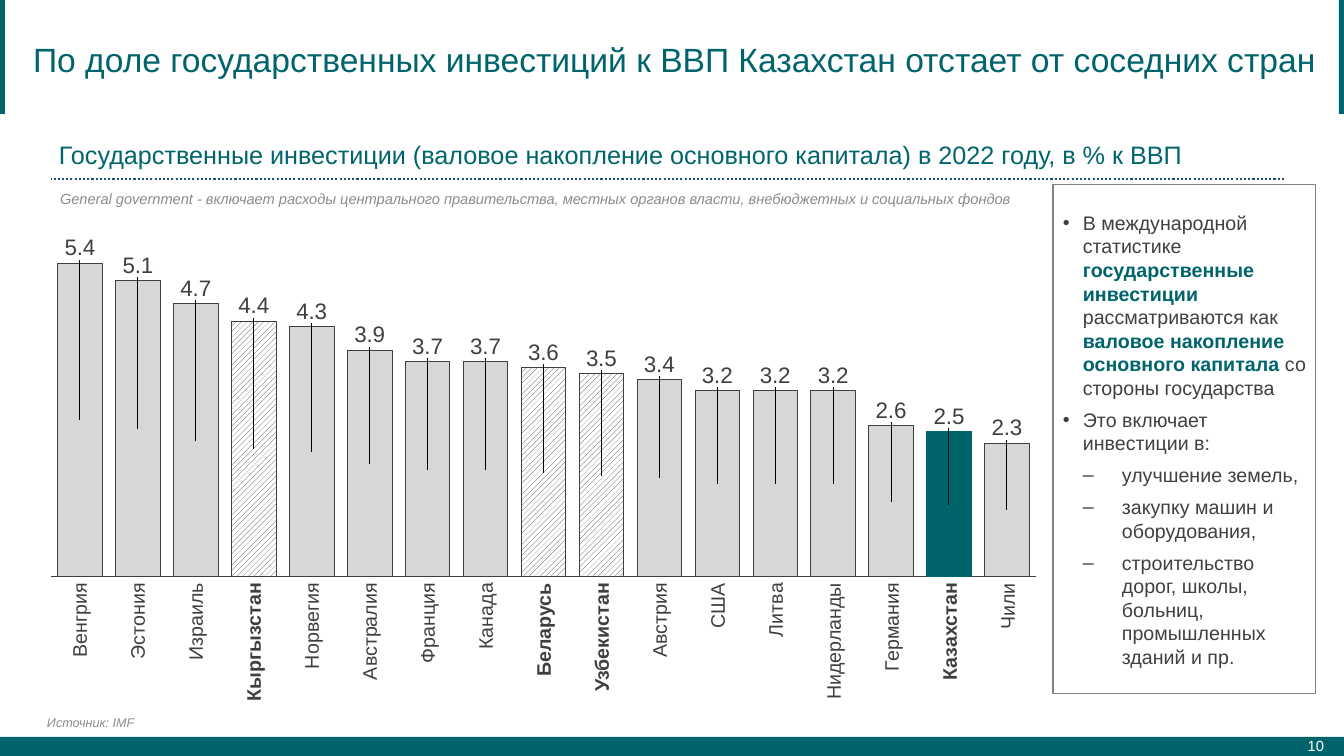
import pptx
import pptx.chart.data
import pptx.dml.color
import pptx.enum.chart
import pptx.enum.dml
import pptx.enum.shapes
import pptx.enum.text
import pptx.oxml
import pptx.oxml.ns
import pptx.util

# Content
TEAL, DARK, GREY, BAR, WHITE = "00646C", "3F3F3F", "8C8C8C", "D6D7D9", "FFFFFF"
TITLE = "По доле государственных инвестиций к ВВП Казахстан отстает от соседних стран"
HEADING = "Государственные инвестиции (валовое накопление основного капитала) в 2022 году, в % к ВВП"
DEFINITION = ("General government - включает расходы центрального правительства, "
              "местных органов власти, внебюджетных и социальных фондов")
SOURCE = "Источник: IMF"
PAGE = "10"
# country, % of GDP, label length in px
COUNTRIES = [
    ("Венгрия", 5.4, 75), ("Эстония", 5.1, 77), ("Израиль", 4.7, 78),
    ("Кыргызстан", 4.4, 118), ("Норвегия", 4.3, 86), ("Австралия", 3.9, 97),
    ("Франция", 3.7, 81), ("Канада", 3.7, 67), ("Беларусь", 3.6, 94),
    ("Узбекистан", 3.5, 109), ("Австрия", 3.4, 75), ("США", 3.2, 45),
    ("Литва", 3.2, 54), ("Нидерланды", 3.2, 116), ("Германия", 2.6, 88),
    ("Казахстан", 2.5, 97), ("Чили", 2.3, 46),
]
NEIGHBOURS = ("Кыргызстан", "Беларусь", "Узбекистан")
FOCUS = "Казахстан"
# bullet, text indent px, hanging px, runs (text, highlighted)
NOTES = [
    ("•", 20, 20, [("В международной статистике ", False),
                   ("государственные инвестиции ", True),
                   ("рассматриваются как ", False),
                   ("валовое накопление основного капитала ", True),
                   ("со стороны государства", False)]),
    ("•", 20, 20, [("Это включает инвестиции в:", False)]),
    ("–", 59, 39, [("улучшение земель,", False)]),
    ("–", 59, 39, [("закупку машин и оборудования,", False)]),
    ("–", 59, 39, [("строительство дорог, школы, больниц, промышленных зданий и пр.", False)]),
]
PLOT = {"x": 0.009, "y": 0.133, "w": 0.982, "h": 0.773}
LABEL_GAP = 0.037
LABEL_LEFT, LABEL_TOP, LABEL_STEP, LABEL_WIDTH = 70, 583, 58, 21

ALIGN = pptx.enum.text.PP_ALIGN
ANCHOR = pptx.enum.text.MSO_ANCHOR
RECTANGLE = pptx.enum.shapes.MSO_SHAPE.RECTANGLE


def px(length):
    return pptx.util.Emu(round(length * 914400 / 100.8))


def color(value):
    return pptx.dml.color.RGBColor.from_string(value)


def set_font(font, fill, **values):
    for name, value in {"name": "Arial", **values}.items():
        setattr(font, name, value)
    font.color.rgb = color(fill)


def set_frame(frame, margins=None, **values):
    for name, value in {"word_wrap": True, **values}.items():
        setattr(frame, name, value)
    if margins:
        horizontal, vertical = margins
        frame.margin_left = frame.margin_right = px(horizontal)
        frame.margin_top = frame.margin_bottom = px(vertical)


def add_text(slide, box, text, size, fill, align=ALIGN.LEFT, margins=(0, 0),
             wrap=True, anchor=ANCHOR.MIDDLE, **font):
    shape = slide.shapes.add_textbox(*map(px, box))
    set_frame(shape.text_frame, margins, word_wrap=wrap, vertical_anchor=anchor)
    paragraph = shape.text_frame.paragraphs[0]
    paragraph.alignment = align
    run = paragraph.add_run()
    run.text = text
    set_font(run.font, fill, size=pptx.util.Pt(size), **font)
    return shape


def add_rectangle(slide, box, fill=None, line=None):
    shape = slide.shapes.add_shape(RECTANGLE, *map(px, box))
    shape.shadow.inherit = False
    if fill:
        shape.fill.solid()
        shape.fill.fore_color.rgb = color(fill)
    else:
        shape.fill.background()
    if line:
        shape.line.color.rgb = color(line)
        shape.line.width = pptx.util.Pt(0.75)
    else:
        shape.line.fill.background()
    return shape


def add_child(parent, tag, position=None, **attributes):
    child = pptx.oxml.parse_xml(f"<{tag} {pptx.oxml.ns.nsdecls(tag.split(':')[0])}/>")
    for name, value in attributes.items():
        child.set(name, str(value))
    parent.insert(len(parent) if position is None else position, child)
    return child


def add_layout(parent, position, **values):
    manual = add_child(add_child(parent, "c:layout", position), "c:manualLayout")
    for name, value in values.items():
        add_child(manual, f"c:{name}", val=value)


def style_bar(part, fill, line, pattern=False):
    if pattern:
        part.format.fill.patterned()
        part.format.fill.pattern = pptx.enum.dml.MSO_PATTERN.WIDE_UPWARD_DIAGONAL
        part.format.fill.back_color.rgb = color(WHITE)
    else:
        part.format.fill.solid()
    part.format.fill.fore_color.rgb = color(fill)
    part.format.line.color.rgb = color(line)
    part.format.line.width = pptx.util.Pt(0.5)


def add_investment_chart(slide):
    data = pptx.chart.data.CategoryChartData()
    data.categories = [str(number + 1) for number in range(len(COUNTRIES))]
    values = [value for _, value, _ in COUNTRIES]
    data.add_series("Series 1", values)
    chart = slide.shapes.add_chart(pptx.enum.chart.XL_CHART_TYPE.COLUMN_STACKED,
                                   *map(px, (42, 209, 1003, 406)), data).chart
    chart.has_legend = chart.has_title = False
    set_font(chart.font, DARK, size=pptx.util.Pt(10))
    plot = chart.plots[0]
    plot.gap_width, plot.overlap, plot.vary_by_categories = 30, 100, False

    # Axes
    tick_none = pptx.enum.chart.XL_TICK_MARK.NONE
    for axis in (chart.category_axis, chart.value_axis):
        axis.has_major_gridlines = False
        axis.major_tick_mark = axis.minor_tick_mark = tick_none
    chart.category_axis.tick_label_position = pptx.enum.chart.XL_TICK_LABEL_POSITION.NONE
    chart.category_axis.format.line.color.rgb = color(DARK)
    chart.category_axis.format.line.width = pptx.util.Pt(0.75)
    chart.value_axis.minimum_scale, chart.value_axis.maximum_scale = 0, max(values)
    chart.value_axis.visible = False

    # Bars, with each value lifted from the bar's middle to just above its top
    series = plot.series[0]
    style_bar(series, BAR, DARK)
    for index, (country, _, _) in enumerate(COUNTRIES):
        if country in NEIGHBOURS:
            style_bar(series.points[index], DARK, DARK, pattern=True)
        elif country == FOCUS:
            style_bar(series.points[index], TEAL, TEAL)
        label = series.points[index].data_label
        set_font(label.font, DARK, size=pptx.util.Pt(16))
        label.position = pptx.enum.chart.XL_LABEL_POSITION.CENTER
    for value, label in zip(values, plot._element.xpath(".//c:dLbl")):
        lift = value / max(values) * PLOT["h"] / 2 + LABEL_GAP
        add_layout(label, 1, x=0, y=round(-lift, 4))

    area = chart.element.xpath(".//c:plotArea")[0]
    for layout in area.xpath("./c:layout"):
        area.remove(layout)
    add_layout(area, 0, layoutTarget="inner", xMode="edge", yMode="edge", **PLOT)


def add_country_labels(slide):
    for index, (country, _, length) in enumerate(COUNTRIES):
        box = (LABEL_LEFT + index * LABEL_STEP, LABEL_TOP, LABEL_WIDTH, length)
        shape = add_text(slide, box, country, 14, DARK, ALIGN.RIGHT, wrap=False,
                         bold=country == FOCUS or country in NEIGHBOURS)
        shape.text_frame.paragraphs[0].line_spacing = 0.9
        shape.element.txBody.bodyPr.set("vert", "vert270")


def add_notes_panel(slide):
    frame = add_rectangle(slide, (1053, 185, 263, 509), line="828282").text_frame
    set_frame(frame, vertical_anchor=ANCHOR.MIDDLE)
    for index, (bullet, indent, hanging, runs) in enumerate(NOTES):
        paragraph = frame.add_paragraph() if index else frame.paragraphs[0]
        paragraph.alignment = ALIGN.LEFT
        if index:
            paragraph.space_before = pptx.util.Pt(6)
        properties = paragraph._p.get_or_add_pPr()
        properties.set("marL", str(px(indent)))
        properties.set("indent", str(px(-hanging)))
        add_child(properties, "a:buFont", typeface="Arial")
        add_child(properties, "a:buChar", char=bullet)
        for text, highlighted in runs:
            run = paragraph.add_run()
            run.text = text
            set_font(run.font, TEAL if highlighted else "404040",
                     size=pptx.util.Pt(14), bold=highlighted)


def main():
    presentation = pptx.Presentation()
    presentation.slide_width, presentation.slide_height = px(1344), px(756)
    slide = presentation.slides.add_slide(presentation.slide_layouts[5])

    # Frame bars and page number
    for box in ((0, 737, 1344, 19), (0, 0, 5, 114), (1339, 0, 5, 114)):
        add_rectangle(slide, box, TEAL)
    add_text(slide, (1202, 726, 130, 40), PAGE, 10.5, WHITE, ALIGN.RIGHT, (8, 4))

    # Title
    title = slide.shapes.title
    title.left, title.top, title.width, title.height = map(px, (23, 20, 1303, 78))
    title.text_frame.text = TITLE
    set_frame(title.text_frame, vertical_anchor=ANCHOR.MIDDLE,
              auto_size=pptx.enum.text.MSO_AUTO_SIZE.NONE)
    title.text_frame.paragraphs[0].alignment = ALIGN.LEFT
    set_font(title.text_frame.paragraphs[0].runs[0].font, TEAL, size=pptx.util.Pt(24))

    # Source, definition and chart heading
    add_text(slide, (47, 715, 690, 15), SOURCE, 9, GREY, anchor=ANCHOR.BOTTOM, italic=True)
    add_text(slide, (50, 185, 987, 28), DEFINITION, 10.5, GREY, margins=(10, 5),
             wrap=False, anchor=ANCHOR.TOP, italic=True)
    add_text(slide, (51, 136, 1265, 38), HEADING, 18, "00656D", margins=(8, 4),
             anchor=ANCHOR.BOTTOM)
    rule = slide.shapes.add_connector(pptx.enum.shapes.MSO_CONNECTOR.STRAIGHT,
                                      *map(px, (1284, 179, 51, 179)))
    rule.line.color.rgb = color("1F4E79")
    rule.line.width = pptx.util.Pt(1.5)
    rule.line.dash_style = pptx.enum.dml.MSO_LINE.ROUND_DOT
    add_child(rule.element.spPr, "a:effectLst")

    add_investment_chart(slide)
    add_country_labels(slide)
    add_notes_panel(slide)
    presentation.save("out.pptx")


if __name__ == "__main__":
    main()
